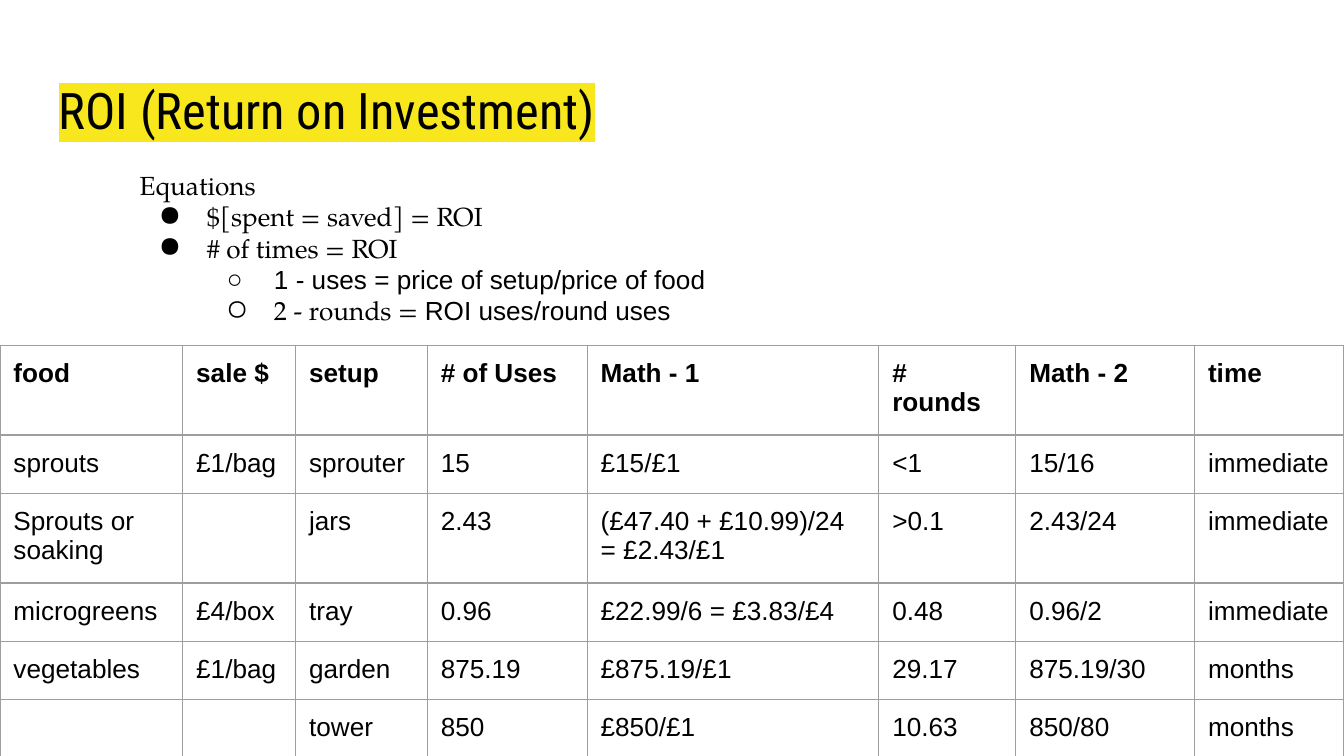
from dataclasses import dataclass
from typing import Any

from lxml.etree import SubElement
from pptx import Presentation
from pptx.dml.color import RGBColor
from pptx.enum.text import MSO_ANCHOR
from pptx.oxml import parse_xml
from pptx.oxml.ns import nsdecls, qn
from pptx.util import Inches, Pt

BLACK = RGBColor(0x00, 0x00, 0x00)
YELLOW = RGBColor(0xF8, 0xE7, 0x1C)
GREY = RGBColor(0x9E, 0x9E, 0x9E)

TITLE_FONT = {"name": "Roboto Condensed", "size": Pt(27)}
SERIF = {"name": "TeX Gyre Pagella", "size": Pt(14)}
SANS = {"name": "Arial", "size": Pt(14)}
INSETS = {
    f"margin_{side}": Inches(0.1) for side in ("left", "right", "top", "bottom")
}
FRAME = INSETS | {"word_wrap": True, "vertical_anchor": MSO_ANCHOR.TOP}
PLAIN_TABLE = {"first_row": False, "horz_banding": False}
PAGE = {"slide_width": Inches(10), "slide_height": Inches(10 * 9 / 16)}


@dataclass(frozen=True)
class Equation:
    runs: tuple[tuple[str, dict[str, Any]], ...]
    bullet: str = ""
    level: int = 0


EQUATIONS = (
    Equation((("Equations", SERIF),)),
    Equation((("$[spent = saved] = ROI", SERIF),), "●"),
    Equation((("# of times = ROI", SERIF),), "●"),
    Equation((("1 - uses = price of setup/price of food", SANS),), "○", 1),
    Equation((("2 - rounds = ", SERIF), ("ROI uses/round uses", SANS)), "○", 1),
)

COLUMN_WIDTHS = (1.36, 0.84, 0.98, 1.19, 2.17, 1.02, 1.33, 1.11)
ROW_HEIGHTS = (0.38, 0.43, 0.36, 0.36, 0.42, 0.42)
FOODS = (
    ("food", "sale $", "setup", "# of Uses", "Math - 1", "# rounds", "Math - 2", "time"),
    ("sprouts", "£1/bag", "sprouter", "15", "£15/£1", "<1", "15/16", "immediate"),
    ("Sprouts or soaking", "", "jars", "2.43", "(£47.40 + £10.99)/24 = £2.43/£1",
     ">0.1", "2.43/24", "immediate"),
    ("microgreens", "£4/box", "tray", "0.96", "£22.99/6 = £3.83/£4", "0.48",
     "0.96/2", "immediate"),
    ("vegetables", "£1/bag", "garden", "875.19", "£875.19/£1", "29.17",
     "875.19/30", "months"),
    ("", "", "tower", "850", "£850/£1", "10.63", "850/80", "months"),
)


def apply(target: Any, values: dict[str, Any]) -> None:
    for key, value in values.items():
        setattr(target, key, value)


def set_default_font(deck: Any, name: str) -> None:
    for root in (deck.element, deck.slide_master.element):
        for latin in root.iter(qn("a:latin")):
            latin.set("typeface", name)


def add_run(paragraph: Any, text: str, font: dict[str, Any]) -> Any:
    run = paragraph.add_run()
    run.text = text
    apply(run.font, font)
    run.font.color.rgb = BLACK
    return run


def add_frame(slide: Any, left: float, top: float, width: float, height: float) -> Any:
    box = slide.shapes.add_textbox(
        Inches(left), Inches(top), Inches(width), Inches(height)
    )
    apply(box.text_frame, FRAME)
    return box.text_frame


def highlight(run: Any, color: RGBColor) -> None:
    mark = parse_xml(
        f'<a:highlight {nsdecls("a")}><a:srgbClr val="{color}"/></a:highlight>'
    )
    run._r.rPr.find(qn("a:solidFill")).addnext(mark)


def set_bullet(paragraph: Any, equation: Equation) -> None:
    paragraph.level = equation.level
    properties = paragraph._p.get_or_add_pPr()
    properties.set("marL", str(Inches(0.5 * (equation.level + 1))))
    properties.set("indent", str(Inches(-0.35)))
    font = equation.runs[0][1]
    color = SubElement(properties, qn("a:buClr"))
    SubElement(color, qn("a:srgbClr"), val=str(BLACK))
    SubElement(properties, qn("a:buSzPts"), val=str(font["size"].centipoints))
    SubElement(properties, qn("a:buFont"), typeface=font["name"])
    SubElement(properties, qn("a:buChar"), char=equation.bullet)


def set_borders(cell: Any) -> None:
    properties = cell._tc.get_or_add_tcPr()
    for position, side in enumerate("LRTB"):
        border = parse_xml(
            f'<a:ln{side} {nsdecls("a")} w="{Pt(0.75)}"><a:solidFill>'
            f'<a:srgbClr val="{GREY}"/></a:solidFill></a:ln{side}>'
        )
        properties.insert(position, border)


def draw_title(slide: Any) -> None:
    title = add_frame(slide, 0.34, 0.49, 9.32, 0.63)
    heading = add_run(title.paragraphs[0], "ROI (Return on Investment)", TITLE_FONT)
    highlight(heading, YELLOW)


def draw_foods(slide: Any) -> None:
    foods = slide.shapes.add_table(
        len(FOODS), len(COLUMN_WIDTHS), Inches(0), Inches(2.57),
        Inches(sum(COLUMN_WIDTHS)), Inches(sum(ROW_HEIGHTS)),
    ).table
    apply(foods, PLAIN_TABLE)
    properties = foods._tbl.tblPr
    properties.remove(properties.find(qn("a:tableStyleId")))
    for column, width in zip(foods.columns, COLUMN_WIDTHS):
        column.width = Inches(width)
    for index, (row, height, entries) in enumerate(zip(foods.rows, ROW_HEIGHTS, FOODS)):
        row.height = Inches(height)
        for cell, entry in zip(row.cells, entries):
            apply(cell, INSETS)
            cell.fill.background()
            set_borders(cell)
            if entry:
                font = SANS | {"bold": index == 0}
                add_run(cell.text_frame.paragraphs[0], entry, font)


def draw_equations(slide: Any) -> None:
    notes = add_frame(slide, 0.94, 1.16, 7.89, 1.38)
    for index, equation in enumerate(EQUATIONS):
        paragraph = notes.add_paragraph() if index else notes.paragraphs[0]
        if equation.bullet:
            set_bullet(paragraph, equation)
        for text, font in equation.runs:
            add_run(paragraph, text, font)


def main() -> None:
    deck = Presentation()
    apply(deck, PAGE)
    set_default_font(deck, "Arial")
    slide = deck.slides.add_slide(deck.slide_layouts[6])
    draw_title(slide)
    draw_foods(slide)
    draw_equations(slide)
    deck.save("out.pptx")


if __name__ == "__main__":
    main()
